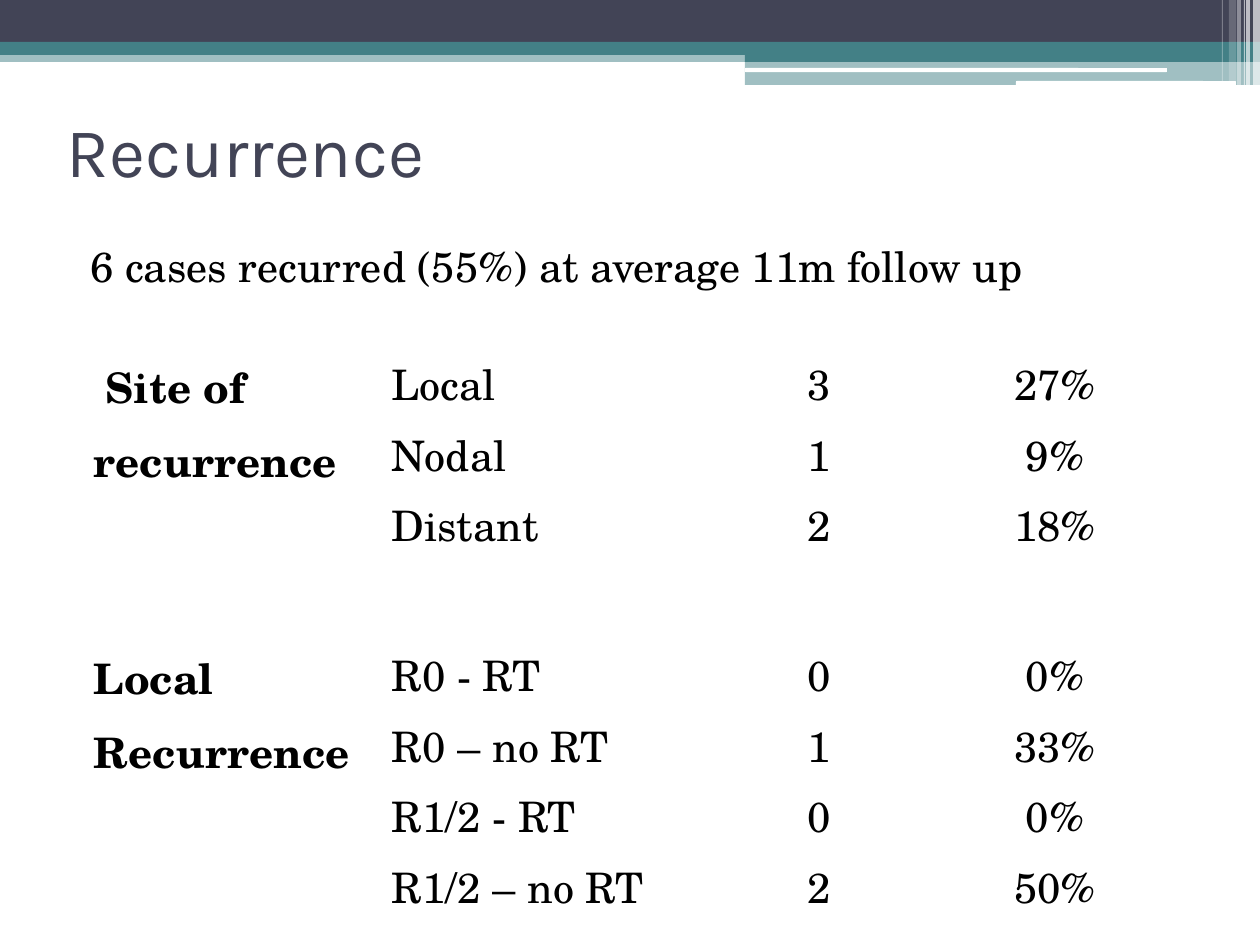
from lxml.etree import SubElement
from pptx import Presentation
from pptx.dml.color import RGBColor
from pptx.enum.shapes import MSO_SHAPE as Preset
from pptx.enum.text import MSO_ANCHOR as Anchor, PP_ALIGN as Align
from pptx.oxml.ns import qn
from pptx.util import Emu, Pt

PX = 914400 / 126
COLORS = {"navy": "424456", "teal": "438086", "white": "FFFFFF", "ink": "000000"}
HEAD_FONT, BODY_FONT = "Karla", "TeX Gyre Schola"

BANDS = [
    (0, 50, 1260, 12, "teal", 50),
    (0, 0, 1260, 42, "navy", 100),
    (0, 42, 1260, 13, "teal", 100),
    (745, 49, 515, 13, "teal", 100),
    (745, 61, 515, 24, "teal", 50),
]
RULES = [(745, 68, 422, 4), (1016, 81, 220, 5)]
STRIPES = [
    (1253, 7, 85, 65), (1246, 4, 85, 65), (1244, 1, 85, 60),
    (1237, 4, 85, 40), (1229, 7, 81, 20), (1222, 1, 81, 30),
]
GROUPS = [
    (" Site of recurrence",
     [("Local", "3", "27%"), ("Nodal", "1", "9%"), ("Distant", "2", "18%")]),
    ("Local Recurrence",
     [("R0 - RT", "0", "0%"), ("R0 – no RT", "1", "33%"),
      ("R1/2 - RT", "0", "0%"), ("R1/2 – no RT", "2", "50%")]),
]
COLUMN_WIDTHS = [298, 307, 258, 214]
ROW_HEIGHTS = [71, 70, 150, 71, 70, 71, 70]


def px(length):
    """Turn pixels into EMU."""
    return Emu(round(length * PX))


def rgb(color):
    """Look up a named colour."""
    return RGBColor.from_string(COLORS[color])


def add_block(slide, box, color, opacity=100, preset=Preset.RECTANGLE):
    """Add a plain filled shape without outline or shadow."""
    block = slide.shapes.add_shape(preset, *map(px, box))
    block.shadow.inherit = False
    block.line.fill.background()
    block.fill.solid()
    block.fill.fore_color.rgb = rgb(color)
    if opacity < 100:
        tint = block.fill._xPr.find(qn("a:solidFill"))[0]
        SubElement(tint, qn("a:alpha"), val=str(opacity * 1000))


def add_words(paragraph, words, size, font, color, bold=False):
    """Add one formatted run to a paragraph."""
    run = paragraph.add_run()
    run.text = words
    run.font.size, run.font.name, run.font.bold = Pt(size), font, bold
    run.font.color.rgb = rgb(color)


def add_banner(slide, left, top):
    """Draw the bands, white rules and stripes along the top."""
    for x, y, width, height, color, opacity in BANDS:
        add_block(slide, (left + x, top + y, width, height), color, opacity)
    for x, y, width, height in RULES:
        add_block(slide, (left + x, top + y, width, height), "white",
                  preset=Preset.ROUNDED_RECTANGLE)
    for x, width, height, opacity in STRIPES:
        add_block(slide, (left + x, top, width, height), "white", opacity)


def add_title(slide, box):
    """Place the heading, centred vertically in its box."""
    frame = slide.shapes.add_textbox(*map(px, box)).text_frame
    frame.word_wrap = True
    frame.vertical_anchor = Anchor.MIDDLE
    add_words(frame.paragraphs[0], "Recurrence", 40, HEAD_FONT, "navy")


def add_summary(slide, box):
    """Place the indented summary sentence."""
    frame = slide.shapes.add_textbox(*map(px, box)).text_frame
    frame.word_wrap = True
    sentence = frame.paragraphs[0]
    sentence.space_before = Pt(3)
    properties = sentence._p.get_or_add_pPr()
    properties.set("marL", str(px(15)))
    properties.set("indent", "0")
    add_words(sentence, "6 cases recurred (55%) at average 11m follow up",
              24, BODY_FONT, "ink")


def style_cell(cell, first_row):
    """Give a cell white borders, tight margins and no fill."""
    cell.margin_left = cell.margin_right = px(9)
    cell.margin_top = cell.margin_bottom = 0
    properties = cell._tc.get_or_add_tcPr()
    for side in "LRTB":
        width = Pt(3 if first_row and side == "B" else 1)
        border = SubElement(properties, qn(f"a:ln{side}"), w=str(width))
        paint = SubElement(border, qn("a:solidFill"))
        SubElement(paint, qn("a:srgbClr"), val=COLORS["white"])
    cell.fill.background()


def fill_cell(cell, words, align=Align.LEFT, bold=False):
    """Write one table entry."""
    entry = cell.text_frame.paragraphs[0]
    entry.alignment, entry.line_spacing = align, 1.15
    add_words(entry, words, 24, BODY_FONT, "ink", bold)


def add_recurrence_table(slide, left, top):
    """Place the table of recurrence counts by group."""
    box = left, top, sum(COLUMN_WIDTHS), sum(ROW_HEIGHTS)
    table = slide.shapes.add_table(
        len(ROW_HEIGHTS), len(COLUMN_WIDTHS), *map(px, box)).table
    table.first_row = table.horz_banding = False
    for column, width in zip(table.columns, COLUMN_WIDTHS):
        column.width = px(width)
    for index, (row, height) in enumerate(zip(table.rows, ROW_HEIGHTS)):
        row.height = px(height)
        for cell in row.cells:
            style_cell(cell, index == 0)
    start = 0
    for group, entries in GROUPS:
        heading = table.cell(start, 0)
        heading.merge(table.cell(start + len(entries) - 1, 0))
        fill_cell(heading, group, bold=True)
        for index, (label, cases, share) in enumerate(entries, start):
            fill_cell(table.cell(index, 1), label)
            fill_cell(table.cell(index, 2), cases, Align.CENTER)
            fill_cell(table.cell(index, 3), share, Align.CENTER)
        start += len(entries)


def main():
    """Build and save the slide."""
    deck = Presentation()
    deck.slide_width, deck.slide_height = px(1260), px(945)
    slide = deck.slides.add_slide(deck.slide_layouts[6])
    add_banner(slide, 0, 0)
    add_title(slide, (54, 76, 1134, 147))
    add_summary(slide, (63, 234, 1134, 672))
    add_recurrence_table(slide, 85, 344)
    deck.save("out.pptx")


if __name__ == "__main__":
    main()
